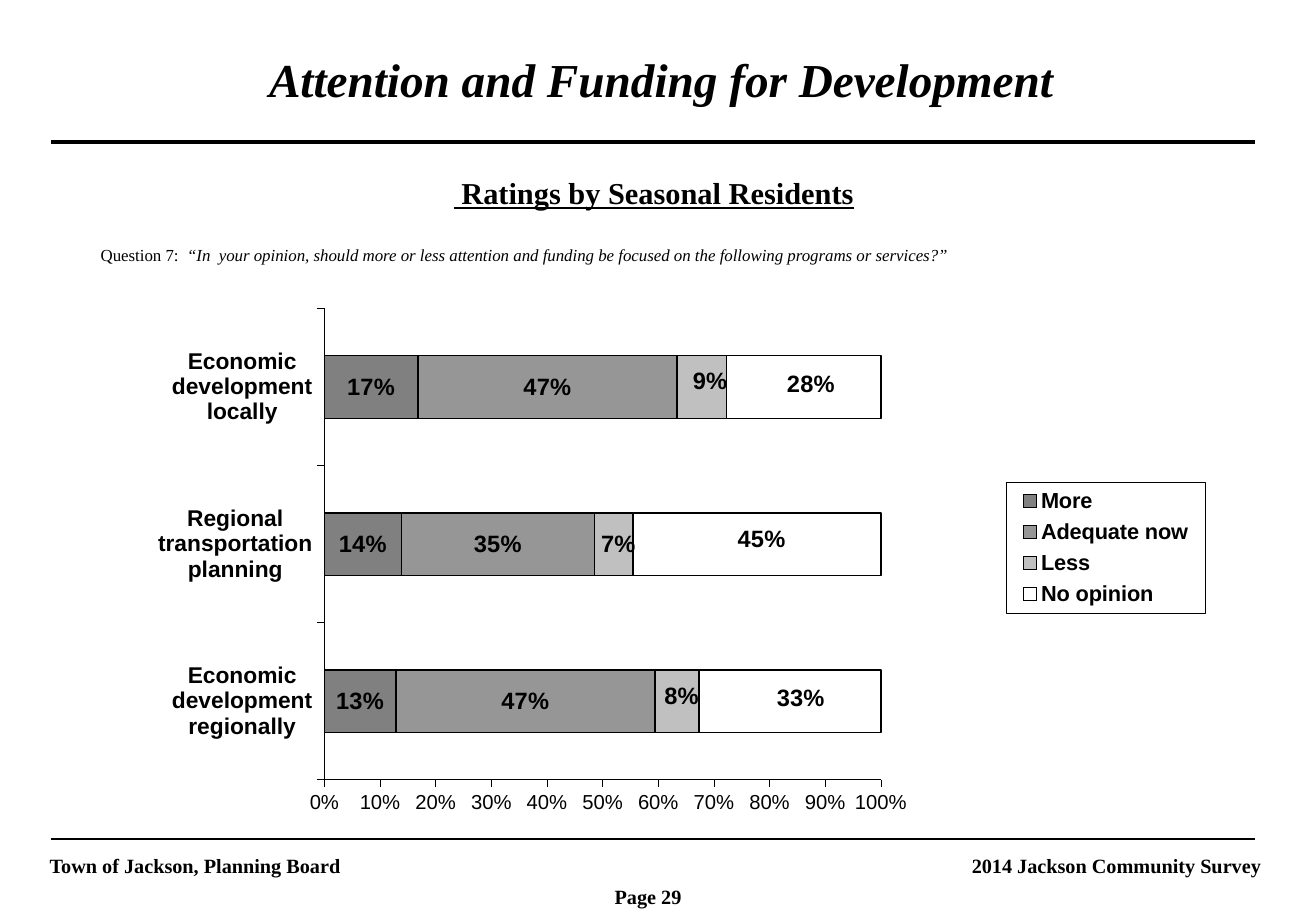
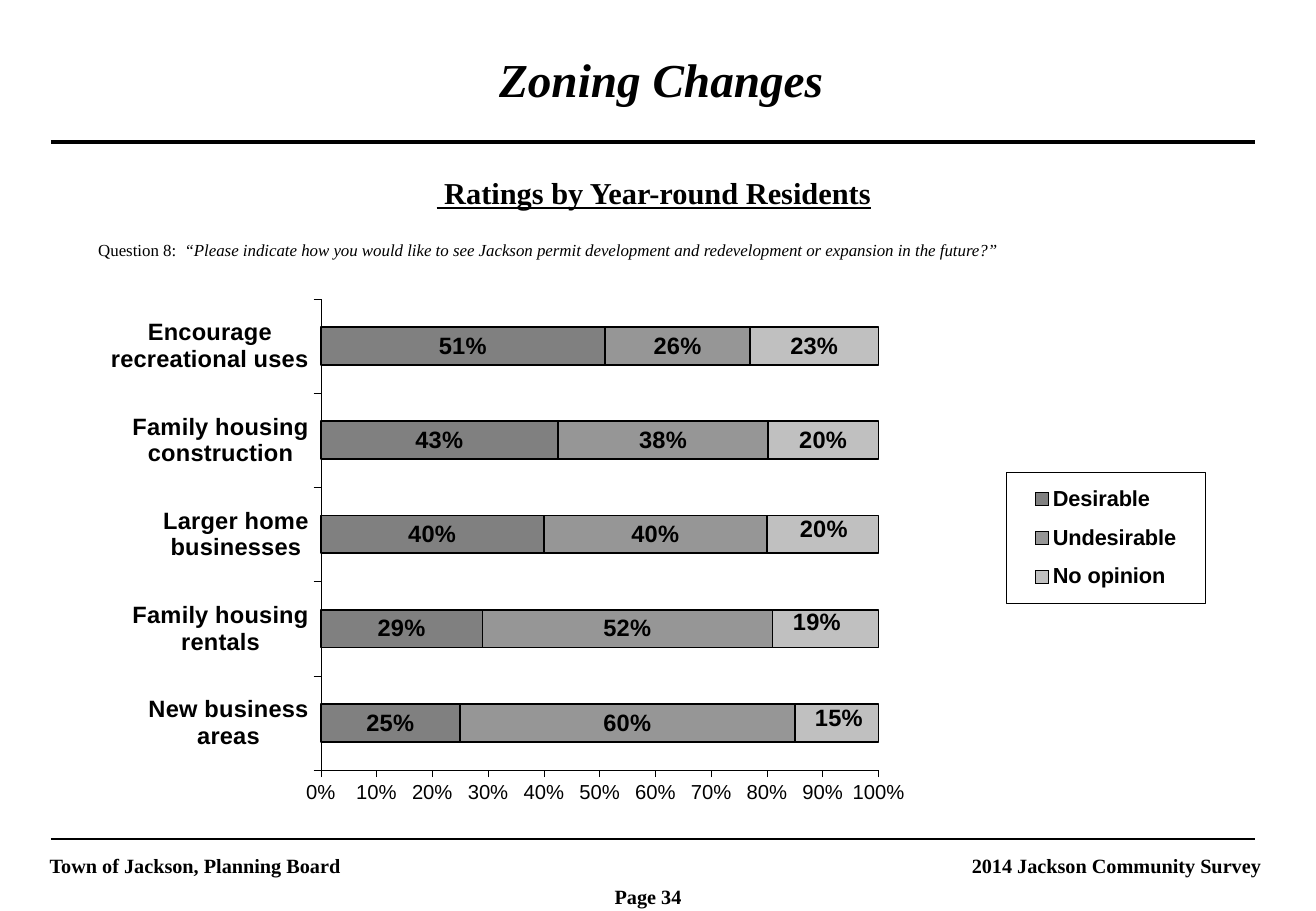
from pptx import Presentation
from pptx import util as u
from pptx.chart import data as cd
from pptx.dml.color import RGBColor
from pptx.enum import chart as ce, shapes, text
from pptx.oxml import parse_xml
from pptx.oxml.ns import nsdecls, qn

PX = 9144  # one px is a hundredth of an inch
INK = {"black": "000000", "dark": "808080", "mid": "969696",
       "light": "C0C0C0", "white": "FFFFFF"}
SERIF, SANS = "Times New Roman", "Arial"
LEFT, CENTER, RIGHT = (text.PP_ALIGN.LEFT, text.PP_ALIGN.CENTER,
                       text.PP_ALIGN.RIGHT)
WIDE, HIGH = 1083, 750
EDGE, END = 42, 1033  # ends of both rules


def px(*vals):
    return [u.Emu(v * PX) for v in vals]


def rgb(name):
    return RGBColor.from_string(INK[name])


def style(font, size, face=SANS, bold=True):
    font.name, font.size, font.bold = face, u.Pt(size), bold
    font.color.rgb = rgb("black")


def stroke(line, width):
    line.color.rgb = rgb("black")
    line.width = u.Pt(width)


def write(slide, box, runs, size, align=LEFT, bold=True):
    """Runs are (words, {font flag: value}) pairs."""
    frame = slide.shapes.add_textbox(*px(*box)).text_frame
    frame.word_wrap = True
    frame.auto_size = text.MSO_AUTO_SIZE.SHAPE_TO_FIT_TEXT
    para = frame.paragraphs[0]
    para.alignment, para.line_spacing = align, 0.9
    for words, flags in runs:
        run = para.add_run()
        run.text = words
        style(run.font, size, SERIF, bold)
        for flag, val in flags.items():
            setattr(run.font, flag, val)


def rule(slide, y, width):
    line = slide.shapes.add_connector(shapes.MSO_CONNECTOR.STRAIGHT,
                                      *px(EDGE, y, END, y))
    stroke(line.line, width)
    line._element.spPr.append(parse_xml(f"<a:effectLst {nsdecls('a')}/>"))


def place(box, x, y, size=None, inner=False):
    """Chart layout: an edge box if a size is given, else an offset."""
    parts = [("layoutTarget", "inner")] if inner else []
    nums = [("x", x / box[2]), ("y", y / box[3])]
    if size:
        parts += [("xMode", "edge"), ("yMode", "edge")]
        nums += [("w", size[0] / box[2]), ("h", size[1] / box[3])]
    body = "".join(f'<c:{tag} val="{val}"/>' for tag, val in parts + nums)
    return parse_xml(f"<c:layout {nsdecls('c')}><c:manualLayout>{body}"
                     "</c:manualLayout></c:layout>")


def clear(node):
    for old in node.findall(qn("c:layout")):
        node.remove(old)


# Title, rules and footer
def frame(slide, title, page):
    write(slide, (48, 42, 992, 52), [(title, {"italic": True})], 28, CENTER)
    rule(slide, 117, 2)
    rule(slide, 691, 1)
    write(slide, (31, 700, 392, 28),
          [("Town of Jackson, Planning Board", {})], 12)
    write(slide, (681, 700, 367, 28),
          [("2014 Jackson Community Survey", {})], 12, RIGHT)
    write(slide, (496, 725, 92, 28), [(f"Page {page}", {})], 12)


# Subtitle and survey question
def intro(slide, who, spot, num, ask):
    write(slide, (42, 142, 992, 37),
          [(f" Ratings by {who}", {"underline": True})], 18, CENTER)
    write(slide, (*spot, 908, 25),
          [(f"Question {num}:", {}), (f"  “{ask}”", {"italic": True})],
          10, bold=False)


def axes(chart, size):
    for axis, pts, bold in ((chart.category_axis, size, True),
                            (chart.value_axis, 12, False)):
        axis.has_major_gridlines = False
        axis.major_tick_mark = ce.XL_TICK_MARK.OUTSIDE
        axis.minor_tick_mark = ce.XL_TICK_MARK.NONE
        stroke(axis.format.line, 0.25)
        style(axis.tick_labels.font, pts, bold=bold)
    axis.minimum_scale, axis.maximum_scale, axis.major_unit = 0, 1, 0.1
    axis.tick_labels.number_format = "0%"
    axis.tick_labels.number_format_is_linked = False


def legend(chart, box, x):
    chart.has_legend = True
    key = chart.legend
    key.position = ce.XL_LEGEND_POSITION.RIGHT
    key.include_in_layout = False
    style(key.font, 12.9)
    node = key._element
    clear(node)
    node.find(qn("c:legendPos")).addnext(place(box, x, 157, (164, 108)))
    node.find(qn("c:overlay")).addnext(parse_xml(
        f'<c:spPr {nsdecls("c", "a")}><a:ln w="3175"><a:solidFill>'
        f'<a:srgbClr val="{INK["black"]}"/></a:solidFill></a:ln></c:spPr>'))


# Stacked bars; each row is (name, colour, values, label offsets)
def bars(slide, box, cats, rows, size, plot, key):
    data = cd.CategoryChartData(number_format="0%")
    data.categories = cats
    for name, _, vals, _ in rows:
        data.add_series(name, vals)
    chart = slide.shapes.add_chart(ce.XL_CHART_TYPE.BAR_STACKED_100,
                                   *px(*box), data).chart
    style(chart.font, 18.1)
    chart.has_title = False
    axes(chart, size)
    legend(chart, box, key)
    group = chart.plots[0]
    group.gap_width, group.overlap = 150, 100
    group.vary_by_categories = False
    for ser, (_, tone, _, moves) in zip(group.series, rows):
        ser.format.fill.solid()
        ser.format.fill.fore_color.rgb = rgb(tone)
        stroke(ser.format.line, 1)
        tags = ser.data_labels
        tags.show_value = True
        tags.number_format, tags.number_format_is_linked = "0%", False
        style(tags.font, 14)
        for i, move in enumerate(moves):
            style(ser.points[i].data_label.font, 14)
            idx = ser._element.xpath(f"c:dLbls/c:dLbl/c:idx[@val='{i}']")[0]
            idx.addnext(place(box, *move))
    area = chart._chartSpace.chart.plotArea
    clear(area)
    area.insert(0, place(box, plot[0], 14, (plot[1], 388), True))


def main():
    prs = Presentation()
    prs.slide_width, prs.slide_height = px(WIDE, HIGH)
    blank = prs.slide_layouts[6]

    # Development
    slide = prs.slides.add_slide(blank)
    frame(slide, "Attention and Funding for Development", 29)
    intro(slide, "Seasonal Residents", (73, 198), 7,
          "In  your opinion, should more or less attention and funding be "
          "focused on the following programs or services?")
    bars(slide, (93, 240, 906, 451),
         ["Economic development regionally",
          "Regional transportation planning",
          "Economic development locally"],
         [("More", "dark", (0.13, 0.14, 0.17), ()),
          ("Adequate now", "mid", (0.47, 0.35, 0.47), ()),
          ("Less", "light", (0.08, 0.07, 0.09), ((4, -4), (4, 0), (7, -5))),
          ("No opinion", "white", (0.33, 0.45, 0.28),
           ((9, -2), (4, -4), (6, -2)))],
         13.5, (174, 458), 735)

    # Zoning
    slide = prs.slides.add_slide(blank)
    frame(slide, "Zoning Changes", 34)
    intro(slide, "Year-round Residents", (71, 194), 8,
          "Please indicate how you would like to see Jackson permit "
          "development and redevelopment or expansion in the future?")
    bars(slide, (76, 232, 922, 451),
         ["New business areas", "Family housing rentals",
          "Larger home businesses", "Family housing construction",
          "Encourage recreational uses"],
         [("Desirable", "dark", (0.25, 0.29, 0.4, 0.43, 0.51), ()),
          ("Undesirable", "mid", (0.6, 0.52, 0.4, 0.38, 0.26), ()),
          ("No opinion", "light", (0.15, 0.19, 0.2, 0.2, 0.23),
           ((2, -4), (-7, -5), (1, -4)))],
         14, (188, 459), 752)

    prs.save("out.pptx")


if __name__ == "__main__":
    main()
